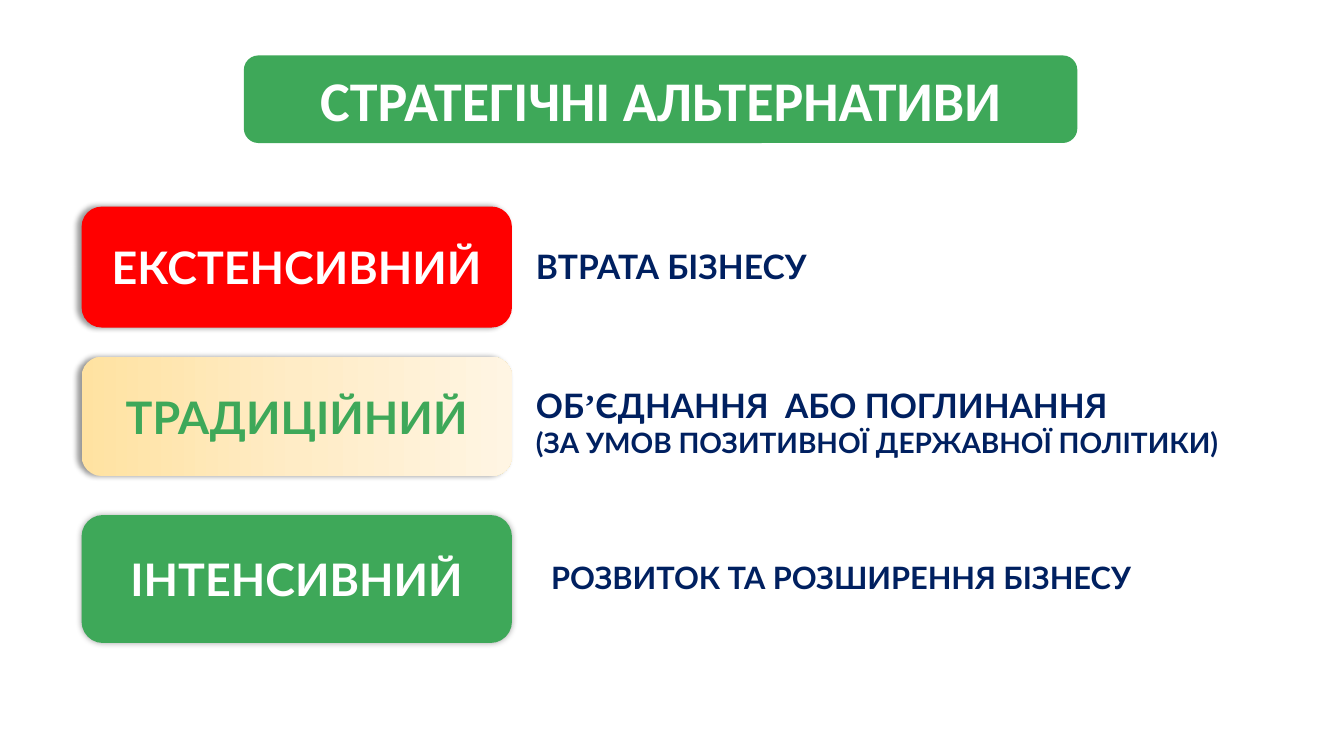
from dataclasses import dataclass
from typing import Optional

from lxml import etree
from pptx import Presentation
from pptx.dml.color import RGBColor
from pptx.enum.shapes import MSO_SHAPE
from pptx.enum.text import MSO_ANCHOR, MSO_AUTO_SIZE, PP_ALIGN
from pptx.oxml.ns import qn
from pptx.util import Pt

ROUND = MSO_SHAPE.ROUNDED_RECTANGLE
MIDDLE = MSO_ANCHOR.MIDDLE
CENTER = PP_ALIGN.CENTER
GROW = MSO_AUTO_SIZE.SHAPE_TO_FIT_TEXT

COLORS = {
    "green": "3EA859",
    "red": "FF0000",
    "white": "FFFFFF",
    "navy": "002060",
    "black": "000000",
    "sand": "FFE2A1",
    "cream": "FFECC6",
    "ivory": "FFF5E3",
}
FADE = ("sand", "cream", "ivory")
BOX_LEFT, BOX_WIDTH = 58.3, 307.4


@dataclass(frozen=True)
class Run:
    text: str
    size: float
    color: str = "navy"
    font: str = "Lato"


@dataclass(frozen=True)
class Shade:
    blur: float
    dist: float
    angle: int


@dataclass(frozen=True)
class Box:
    left: float
    top: float
    width: float
    height: float
    fills: tuple[str, ...]
    run: Run
    shade: Optional[Shade] = None


@dataclass(frozen=True)
class Note:
    left: float
    top: float
    width: float
    height: float
    lines: tuple[tuple[Run, ...], ...]


SIDE = Shade(4, 3, 180)
GLOW = Shade(5, 0, 0)

BOXES = (
    Box(174.2, 39.6, 595.4, 62.6, ("green",),
        Run("СТРАТЕГІЧНІ АЛЬТЕРНАТИВИ", 40, "white", "Calibri")),
    Box(BOX_LEFT, 147.6, BOX_WIDTH, 86.4, ("red",),
        Run("ЕКСТЕНСИВНИЙ", 32, "white"), SIDE),
    Box(BOX_LEFT, 254.9, BOX_WIDTH, 85, FADE,
        Run("ТРАДИЦІЙНИЙ", 32, "green"), SIDE),
    Box(BOX_LEFT, 367.9, BOX_WIDTH, 91.4, ("green",),
        Run("ІНТЕНСИВНИЙ", 32, "white"), GLOW),
)

NOTES = (
    Note(375.8, 172.1, 558.7, 36, ((Run("ВТРАТА БІЗНЕСУ", 24),),)),
    Note(375.8, 271.4, 558.7, 60.5, (
        (Run("ОБ", 24), Run("ʼ", 24, font="Times New Roman"),
         Run("ЄДНАННЯ  АБО ПОГЛИНАННЯ", 24)),
        (Run("(ЗА УМОВ ПОЗИТИВНОЇ ДЕРЖАВНОЇ ПОЛІТИКИ)", 20),),
    )),
    Note(386.6, 395.3, 500.4, 33.8,
         ((Run("РОЗВИТОК ТА РОЗШИРЕННЯ БІЗНЕСУ", 22),),)),
)


def add_run(para, run: Run) -> None:
    part = para.add_run()
    part.text = run.text
    font = part.font
    font.name, font.size, font.bold = run.font, Pt(run.size), True
    font.color.rgb = RGBColor.from_string(COLORS[run.color])


def add_color(parent, name: str):
    return etree.SubElement(parent, qn("a:srgbClr"), val=COLORS[name])


def fill_shape(shape, names: tuple[str, ...]) -> None:
    """Fill with one colour, or fade evenly from left to right through several."""
    if len(names) == 1:
        shape.fill.solid()
        shape.fill.fore_color.rgb = RGBColor.from_string(COLORS[names[0]])
        return
    shape.fill.gradient()
    shape.fill.gradient_angle = 0
    stops = shape._element.spPr.find(".//" + qn("a:gsLst"))
    for stop in list(stops):
        stops.remove(stop)
    for i, name in enumerate(names):
        pos = 100000 * i // (len(names) - 1)
        add_color(etree.SubElement(stops, qn("a:gs"), pos=str(pos)), name)


def add_shade(shape, shade: Shade) -> None:
    effects = shape._element.spPr.find(qn("a:effectLst"))
    outer = etree.SubElement(
        effects, qn("a:outerShdw"), blurRad=str(Pt(shade.blur)),
        dist=str(Pt(shade.dist)), dir=str(shade.angle * 60000),
        algn="ctr", rotWithShape="0")
    etree.SubElement(add_color(outer, "black"), qn("a:alpha"), val="40000")


def add_box(slide, box: Box) -> None:
    shape = slide.shapes.add_shape(
        ROUND, Pt(box.left), Pt(box.top), Pt(box.width), Pt(box.height))
    fill_shape(shape, box.fills)
    shape.line.fill.background()
    shape.shadow.inherit = False
    if box.shade:
        add_shade(shape, box.shade)
    frame = shape.text_frame
    frame.word_wrap = True
    frame.vertical_anchor = MIDDLE
    para = frame.paragraphs[0]
    para.alignment = CENTER
    add_run(para, box.run)


def add_note(slide, note: Note) -> None:
    frame = slide.shapes.add_textbox(
        Pt(note.left), Pt(note.top), Pt(note.width), Pt(note.height)).text_frame
    frame.word_wrap = True
    frame.auto_size = GROW
    for i, line in enumerate(note.lines):
        para = frame.add_paragraph() if i else frame.paragraphs[0]
        for run in line:
            add_run(para, run)


def main() -> None:
    deck = Presentation()
    deck.slide_width, deck.slide_height = Pt(960), Pt(540)
    slide = deck.slides.add_slide(deck.slide_layouts[6])
    for box in BOXES:
        add_box(slide, box)
    for note in NOTES:
        add_note(slide, note)
    deck.save("out.pptx")


if __name__ == "__main__":
    main()
